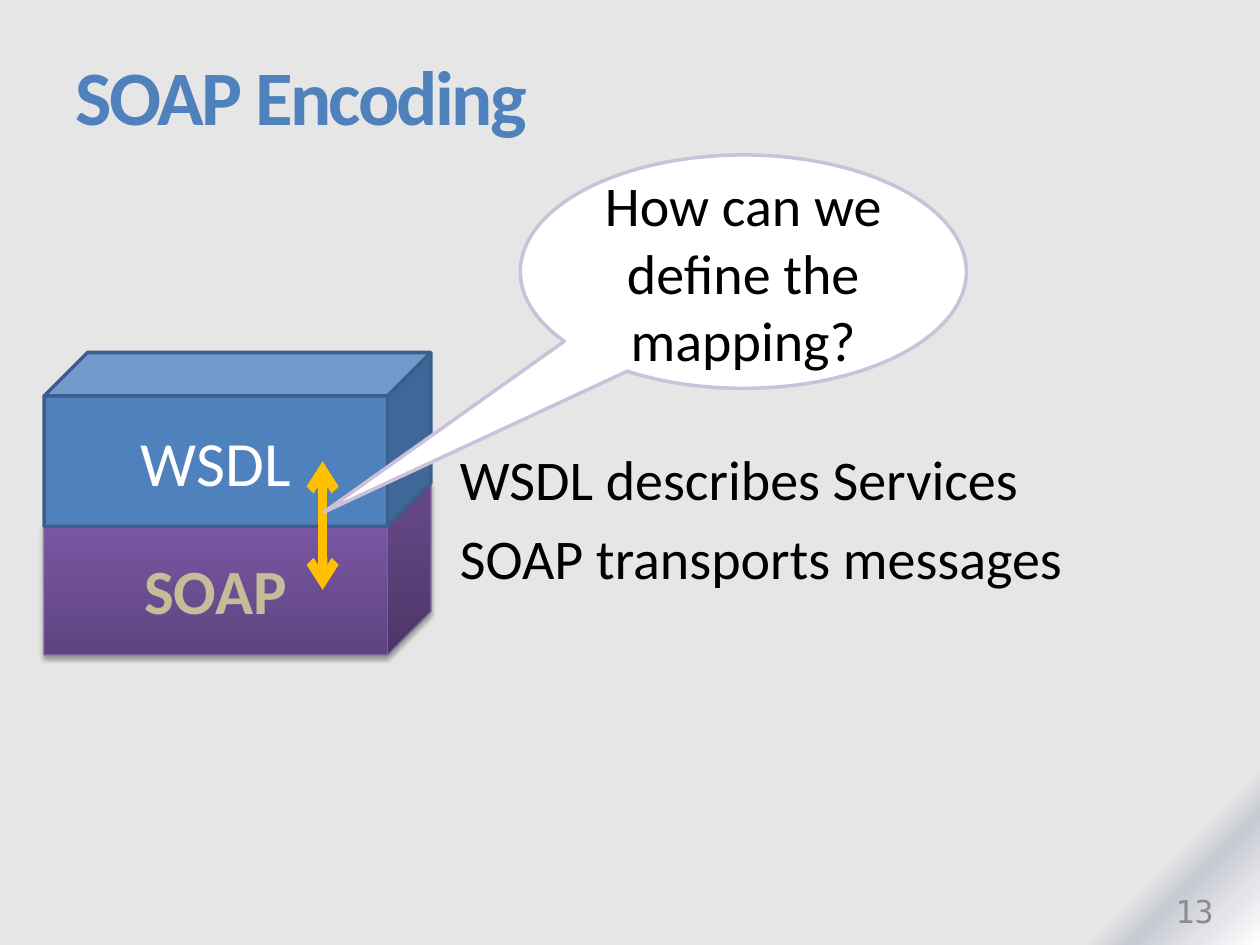
from dataclasses import dataclass

from lxml.etree import SubElement
from pptx import Presentation
from pptx.dml.color import RGBColor
from pptx.enum.shapes import MSO_CONNECTOR, MSO_SHAPE
from pptx.enum.text import MSO_ANCHOR, PP_ALIGN
from pptx.oxml import parse_xml
from pptx.oxml.ns import nsdecls, qn
from pptx.util import Inches, Pt


@dataclass(frozen=True)
class Theme:
    font: str = "Calibri"
    number_font: str = "DejaVu Sans Mono"
    blue: str = "4F81BD"
    blue_edge: str = "3A5F8C"
    purple_dark: str = "5F4480"
    purple: str = "7B58A6"
    purple_edge: str = "7D60A0"
    lilac: str = "CCC1DA"
    sand: str = "C4BD97"
    amber: str = "FFC000"
    grey: str = "8C8C8C"
    black: str = "000000"
    white: str = "FFFFFF"
    backdrop: tuple = ((0, "FFFFFF"), (6, "C7CAD2"), (8, "E6E6E6"), (56, "E6E6E6"))
    title_size: int = 44
    layer_size: int = 36
    body_size: int = 32
    number_size: int = 18


THEME = Theme()
WIDTH, HEIGHT = 10, 7.5


@dataclass(frozen=True)
class Box:
    """Area in inches; sub-areas are given as shares of it."""
    x: float
    y: float
    w: float
    h: float

    def share(self, x, y, w, h):
        return Box(self.x + x * self.w, self.y + y * self.h, w * self.w, h * self.h)

    def emu(self):
        return [Inches(v) for v in (self.x, self.y, self.w, self.h)]


def rgb(value):
    return RGBColor.from_string(value)


def write(tf, lines, size, color, font=THEME.font, bold=False,
          align=PP_ALIGN.LEFT, anchor=MSO_ANCHOR.MIDDLE, before=0):
    tf.text = "\n".join(lines)
    tf.word_wrap = True
    tf.vertical_anchor = anchor
    for p in tf.paragraphs:
        p.alignment = align
        p.space_before = Pt(before)
        for r in p.runs:
            r.font.name, r.font.size, r.font.bold = font, Pt(size), bold
            r.font.color.rgb = rgb(color)


def outlined_shape(slide, kind, box, fill, line, line_width):
    """Add a preset shape; two fill colours give a gradient from the bottom up."""
    sp = slide.shapes.add_shape(kind, *box.emu())
    sp.shadow.inherit = False
    if isinstance(fill, tuple):
        sp.fill.gradient()
        sp.fill.gradient_angle = 90
        for stop, color, position in zip(sp.fill.gradient_stops, fill, (0, 0.8)):
            stop.color.rgb = rgb(color)
            stop.position = position
    else:
        sp.fill.solid()
        sp.fill.fore_color.rgb = rgb(fill)
    sp.line.color.rgb = rgb(line)
    sp.line.width = Pt(line_width)
    return sp


def soft_shadow(sp):
    effects = sp.element.spPr.find(qn("a:effectLst"))
    effects.append(parse_xml(
        f'<a:outerShdw {nsdecls("a")} blurRad="{Pt(3.1)}" dist="{Pt(1.8)}" '
        f'dir="5400000" rotWithShape="0"><a:srgbClr val="{THEME.black}">'
        '<a:alpha val="35000"/></a:srgbClr></a:outerShdw>'))


def corner_glow(slide):
    """Fill the background with a radial gradient from the bottom right corner."""
    stops = "".join(f'<a:gs pos="{pos * 1000}"><a:srgbClr val="{color}"/></a:gs>'
                    for pos, color in THEME.backdrop)
    slide.background.fill.solid()
    bg_pr = slide.element.cSld.find(qn("p:bg")).find(qn("p:bgPr"))
    bg_pr.replace(bg_pr[0], parse_xml(
        f'<a:gradFill {nsdecls("a")} rotWithShape="1"><a:gsLst>{stops}</a:gsLst>'
        '<a:path path="circle"><a:fillToRect l="100000" t="100000"/></a:path>'
        '</a:gradFill>'))


def title(slide, box):
    sp = slide.shapes.title
    sp.left, sp.top, sp.width, sp.height = box.emu()
    write(sp.text_frame, ["SOAP Encoding"], THEME.title_size, THEME.blue, bold=True)
    for r_pr in sp.element.iter(qn("a:rPr")):
        r_pr.set("spc", "-150")


def slide_number(slide, box):
    sp = slide.shapes.add_textbox(*box.emu())
    write(sp.text_frame, ["13"], THEME.number_size, THEME.grey,
          font=THEME.number_font, align=PP_ALIGN.RIGHT)


def descriptions(slide, box):
    tf = slide.shapes.add_textbox(*box.emu()).text_frame
    write(tf, ["WSDL describes Services", "SOAP transports messages"],
          THEME.body_size, THEME.black, anchor=MSO_ANCHOR.TOP,
          before=0.2 * THEME.body_size)
    tf.margin_left = Inches(0.2)


def protocol_stack(slide, box):
    """Stack WSDL on SOAP and join the two with a double arrow."""
    cube = 0.575
    step = 1 - cube
    soap = outlined_shape(slide, MSO_SHAPE.CUBE, box.share(0, step, 1, cube),
                          (THEME.purple_dark, THEME.purple), THEME.purple_edge, 0.75)
    soft_shadow(soap)
    wsdl = outlined_shape(slide, MSO_SHAPE.CUBE, box.share(0, 0, 1, cube),
                          THEME.blue, THEME.blue_edge, 2)
    for sp, name, color, bold in ((soap, "SOAP", THEME.sand, True),
                                  (wsdl, "WSDL", THEME.white, False)):
        write(sp.text_frame, [name], THEME.layer_size, color, bold=bold,
              align=PP_ALIGN.CENTER)
    mapping_arrow(slide, box.share(0.72, 0.36, 0, step))


def mapping_arrow(slide, box):
    x, y, w, h = box.emu()
    arrow = slide.shapes.add_connector(MSO_CONNECTOR.STRAIGHT, x, y, x + w, y + h)
    arrow.line.color.rgb = rgb(THEME.amber)
    arrow.line.width = Pt(5.25)
    sp_pr = arrow.element.spPr
    for end in ("a:headEnd", "a:tailEnd"):
        SubElement(sp_pr.find(qn("a:ln")), qn(end), type="arrow")
    SubElement(sp_pr, qn("a:effectLst"))


def question(slide, box):
    sp = outlined_shape(slide, MSO_SHAPE.OVAL_CALLOUT, box,
                        THEME.white, THEME.lilac, 2)
    sp.adjustments[0], sp.adjustments[1] = -0.94, 1.03
    write(sp.text_frame, ["How can we define the mapping?"], THEME.body_size,
          THEME.black, align=PP_ALIGN.CENTER)


def main():
    prs = Presentation()
    prs.slide_width, prs.slide_height = Inches(WIDTH), Inches(HEIGHT)
    slide = prs.slides.add_slide(prs.slide_layouts[5])
    page = Box(0, 0, WIDTH, HEIGHT)
    corner_glow(slide)
    title(slide, page.share(0.05, 0.017, 0.9, 0.167))
    slide_number(slide, page.share(0.717, 0.927, 0.256, 0.073))
    descriptions(slide, page.share(0.345, 0.464, 0.554, 0.404))
    protocol_stack(slide, page.share(0.035, 0.373, 0.307, 0.32))
    question(slide, page.share(0.413, 0.164, 0.354, 0.247))
    prs.save("out.pptx")


if __name__ == "__main__":
    main()
